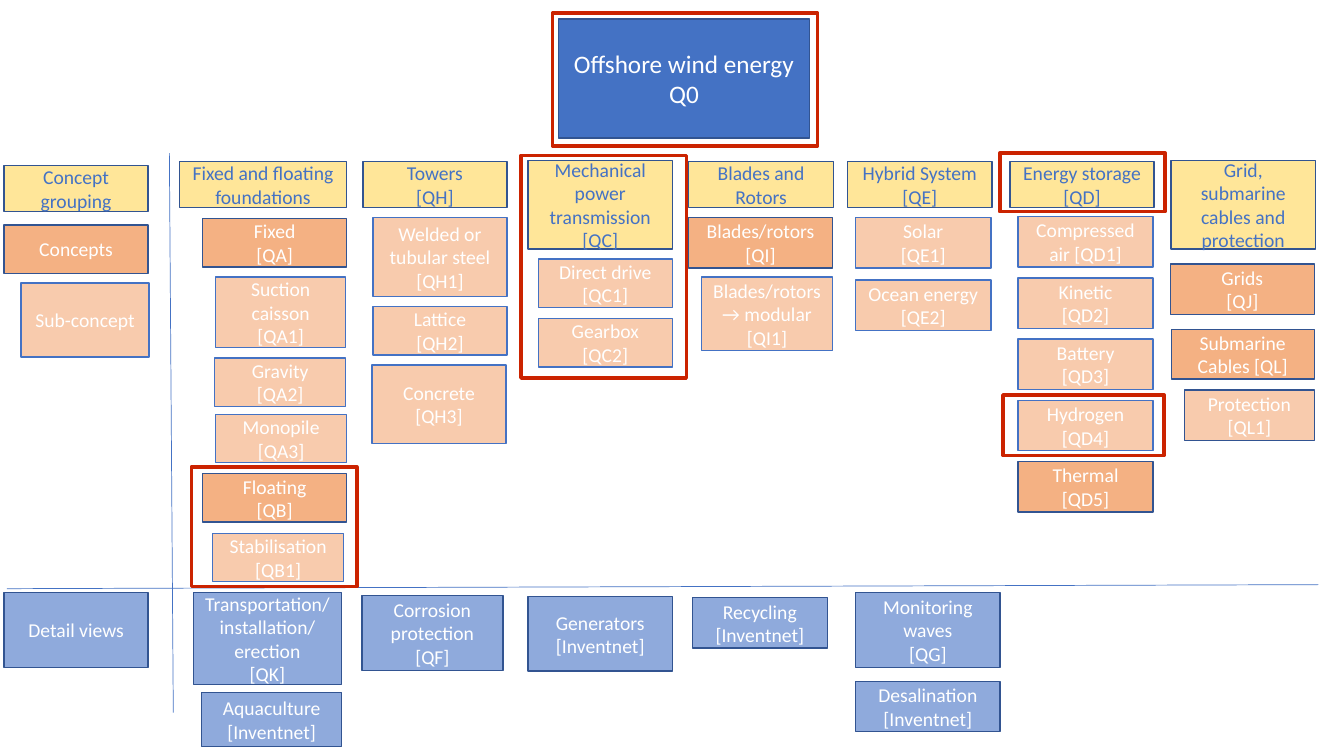
from dataclasses import dataclass, field
from typing import Any, NamedTuple

from pptx import Presentation
from pptx.dml.color import RGBColor as Rgb
from pptx.enum.shapes import MSO_CONNECTOR as Link, MSO_SHAPE as Kind
from pptx.enum.text import MSO_ANCHOR as Anchor, MSO_AUTO_SIZE as Auto, PP_ALIGN as Align
from pptx.oxml.xmlchemy import OxmlElement as Node
from pptx.util import Pt


class Look(NamedTuple):
    fill: str
    edge: str
    ink: str
    size: float


@dataclass(frozen=True)
class Theme:
    font: str = "Calibri"
    rule: str = "4472C4"
    mark: str = "CB2300"
    edge: float = 1
    thin: float = 0.5
    thick: float = 2.5
    looks: dict[str, Look] = field(default_factory=lambda: {
        "root": Look("4472C4", "325491", "FFFFFF", 18),
        "group": Look("FFE699", "325491", "4472C4", 14),
        "concept": Look("F4B183", "325491", "FFFFFF", 14),
        "sub": Look("F8CBAD", "4472C4", "FFFFFF", 14),
        "dark sub": Look("F8CBAD", "325491", "FFFFFF", 14),
        "detail": Look("8FAADC", "325491", "FFFFFF", 14),
    })


class Rect(NamedTuple):
    left: float
    top: float
    width: float
    height: float


class Stack(NamedTuple):
    look: str
    rect: Rect
    texts: tuple[str, ...]
    step: float = 0


class Rule(NamedTuple):
    x1: float
    y1: float
    x2: float
    y2: float


THEME = Theme()
ROOT = Rect(398.9, 13.7, 179.3, 85)

STACKS = [
    Stack("group", Rect(2.9, 118.1, 103, 33.1), ("Concept\ngrouping",)),
    Stack("concept", Rect(2.9, 160.6, 103, 34.6), ("Concepts",)),
    Stack("sub", Rect(15.1, 202.3, 91.4, 52.6), ("Sub-concept",)),
    Stack("detail", Rect(2.9, 423.4, 103, 53.3), ("Detail views",)),

    Stack("group", Rect(128.2, 115.2, 119.5, 33.1), ("Fixed and floating foundations",)),
    Stack("concept", Rect(144.7, 156.2, 103, 34.6), ("Fixed\n[QA]", "Floating\n[QB]"), 182.2),
    Stack("sub", Rect(154.1, 198, 92.9, 50.4), ("Suction caisson\n[QA1]",)),
    Stack("sub", Rect(153.4, 255.6, 93.6, 34.6), ("Gravity\n[QA2]",)),
    Stack("sub", Rect(154.1, 295.9, 93.6, 34.6), ("Monopile\n[QA3]",)),
    Stack("sub", Rect(151.9, 380.9, 93.6, 34.6), ("Stabilisation\n[QB1]",)),
    Stack("detail", Rect(138.2, 423.4, 105.8, 65.5),
          ("Transportation/ installation/ erection\n[QK]",)),
    Stack("detail", Rect(144, 494.6, 100.1, 38.9), ("Aquaculture\n[Inventnet]",)),

    Stack("group", Rect(259.2, 115.2, 103, 33.1), ("Towers\n[QH]",)),
    Stack("sub", Rect(266.4, 155.5, 95.8, 56.2), ("Welded or tubular steel\n[QH1]",)),
    Stack("sub", Rect(266.4, 218.9, 95.8, 34.6), ("Lattice\n[QH2]",)),
    Stack("sub", Rect(265.7, 260.6, 95.8, 56.2), ("Concrete\n[QH3]",)),
    Stack("detail", Rect(258.5, 425.5, 100.8, 53.3), ("Corrosion protection\n[QF]",)),

    Stack("group", Rect(377.3, 114.5, 103, 63.4), ("Mechanical power transmission\n[QC]",)),
    Stack("sub", Rect(384.5, 185, 95.8, 34.6), ("Direct drive\n[QC1]", "Gearbox\n[QC2]"), 42.5),
    Stack("detail", Rect(377.3, 426.2, 103, 53.3), ("Generators\n[Inventnet]",)),

    Stack("group", Rect(491.8, 115.2, 103.7, 33.1), ("Blades and Rotors",)),
    Stack("concept", Rect(491.8, 155.5, 103, 36), ("Blades/rotors\n[QI]",)),
    Stack("sub", Rect(501.1, 198, 93.6, 52.6), ("Blades/rotors\n→ modular\n[QI1]",)),
    Stack("detail", Rect(494.6, 427, 96.5, 36), ("Recycling\n[Inventnet]",)),

    Stack("group", Rect(605.5, 115.2, 103, 33.1), ("Hybrid System [QE]",)),
    Stack("sub", Rect(611.3, 155.5, 96.5, 36), ("Solar\n[QE1]", "Ocean energy\n[QE2]"), 44.6),
    Stack("detail", Rect(611.3, 423.4, 103, 53.3), ("Monitoring waves\n[QG]",)),
    Stack("detail", Rect(611.3, 486.7, 103, 36), ("Desalination\n[Inventnet]",)),

    Stack("group", Rect(721.4, 115.2, 103, 33.1), ("Energy storage\n[QD]",)),
    Stack("sub", Rect(727.2, 154.8, 96.5, 36),
          ("Compressed air [QD1]", "Kinetic\n[QD2]", "Battery\n[QD3]", "Hydrogen\n[QD4]"), 43.7),
    Stack("concept", Rect(727.2, 329.8, 96.5, 36), ("Thermal\n[QD5]",)),

    Stack("group", Rect(836.6, 114.5, 103, 63.4), ("Grid, submarine cables and protection",)),
    Stack("concept", Rect(835.9, 188.6, 103, 36), ("Grids\n[QJ]",)),
    Stack("concept", Rect(836.6, 235.4, 102.2, 35.3), ("Submarine Cables [QL]",)),
    Stack("dark sub", Rect(846, 278.6, 92.9, 36), ("Protection\n[QL1]",)),
]

RULES = [Rule(121, 109.4, 123.8, 509), Rule(941.8, 417.6, 5, 420.5)]

FRAMES = [
    Rect(714.2, 109.4, 118.1, 41.8),
    Rect(716.4, 282.2, 115.2, 43.2),
    Rect(394.6, 9.4, 189.4, 95),
    Rect(372.2, 110.9, 118.1, 159.1),
    Rect(136.8, 333.4, 118.1, 85.7),
]


def fit(item: Any, vals: dict[str, Any]) -> None:
    for name, val in vals.items():
        setattr(item, name, val)


def trace(item: Any, tint: str, width: float) -> None:
    item.line.color.rgb = Rgb.from_string(tint)
    item.line.width = Pt(width)


def block(slide: Any, rect: Rect) -> Any:
    shape = slide.shapes.add_shape(Kind.RECTANGLE, *map(Pt, rect))
    shape.shadow.inherit = False
    return shape


def dress(shape: Any, text: str, look: Look) -> None:
    shape.fill.solid()
    shape.fill.fore_color.rgb = Rgb.from_string(look.fill)
    trace(shape, look.edge, THEME.edge)
    frame = shape.text_frame
    frame.text = text
    fit(frame, {"word_wrap": True, "auto_size": Auto.NONE, "vertical_anchor": Anchor.MIDDLE})
    for para in frame.paragraphs:
        fit(para, {"alignment": Align.CENTER, "line_spacing": 1.0, "space_before": Pt(0)})
        for run in para.runs:
            fit(run.font, {"name": THEME.font, "size": Pt(look.size)})
            run.font.color.rgb = Rgb.from_string(look.ink)


def draw_stack(slide: Any, stack: Stack) -> None:
    for row, text in enumerate(stack.texts):
        rect = stack.rect._replace(top=stack.rect.top + row * stack.step)
        dress(block(slide, rect), text, THEME.looks[stack.look])


def draw_rule(slide: Any, rule: Rule) -> None:
    line = slide.shapes.add_connector(Link.STRAIGHT, *map(Pt, rule))
    trace(line, THEME.rule, THEME.thin)
    line._element.spPr.append(Node("a:effectLst"))


def draw_frame(slide: Any, rect: Rect) -> None:
    shape = block(slide, rect)
    shape.fill.background()
    trace(shape, THEME.mark, THEME.thick)


def main() -> None:
    deck = Presentation()
    fit(deck, {"slide_width": Pt(960), "slide_height": Pt(540)})
    slide = deck.slides.add_slide(deck.slide_layouts[5])
    title = slide.shapes.title
    fit(title, {name: Pt(val) for name, val in ROOT._asdict().items()})
    dress(title, "Offshore wind energy\nQ0", THEME.looks["root"])
    for stack in STACKS:
        draw_stack(slide, stack)
    for rule in RULES:
        draw_rule(slide, rule)
    for rect in FRAMES:
        draw_frame(slide, rect)
    deck.save("out.pptx")


if __name__ == "__main__":
    main()
